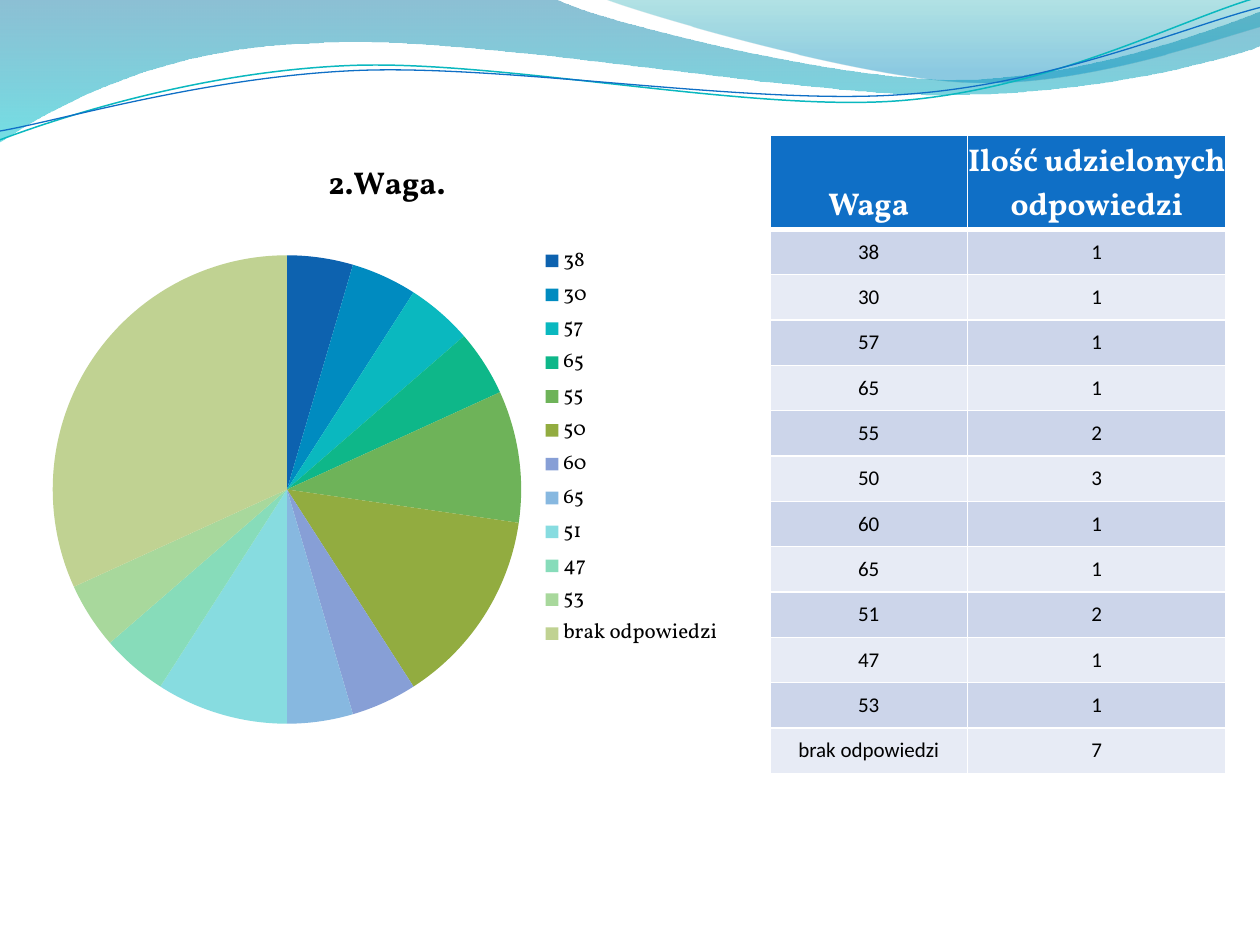
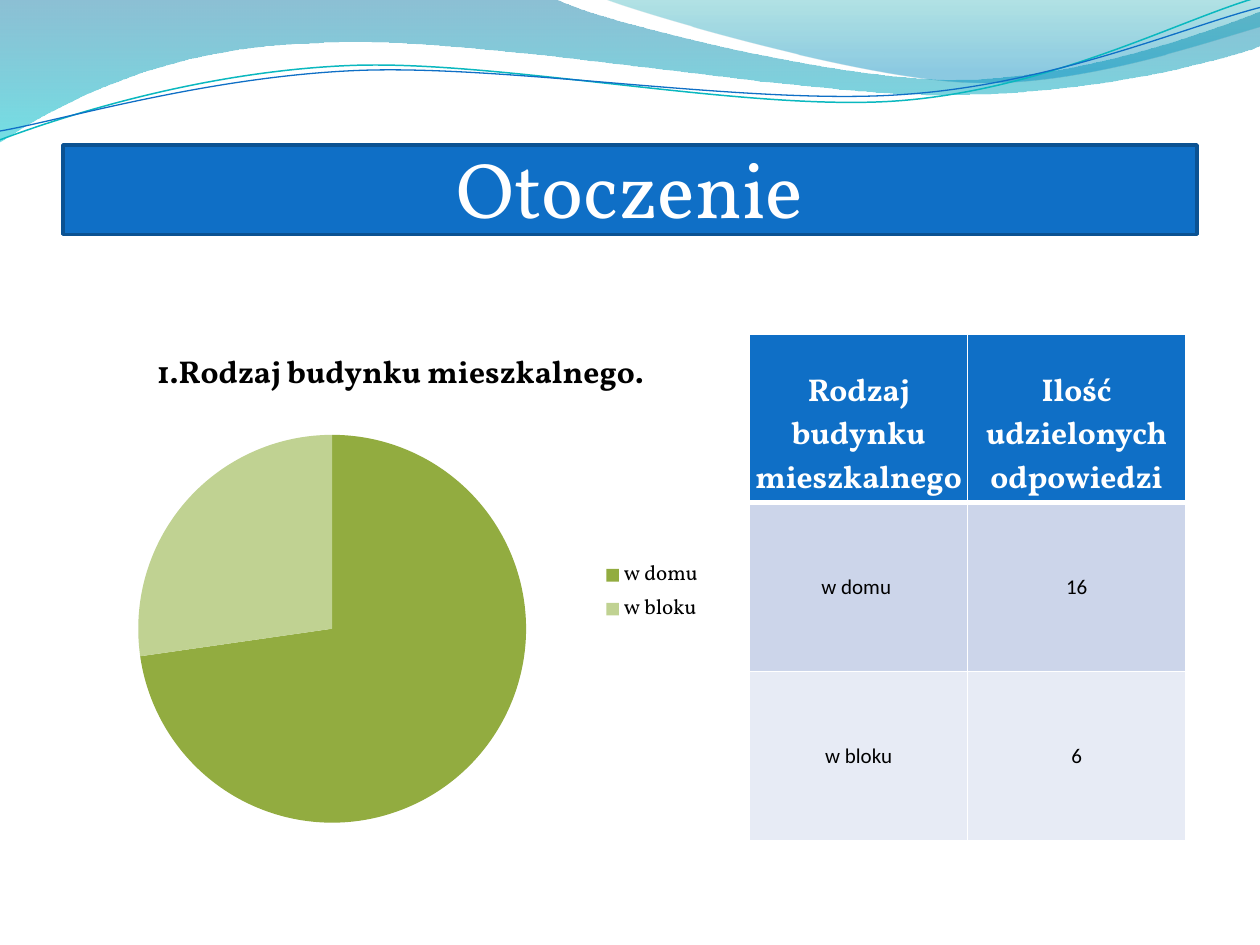
"""Build two survey slides, each with a pie chart and its table, under a wave header."""
import dataclasses
import math

import lxml.etree
import pptx
import pptx.chart.data
import pptx.dml.color
import pptx.enum.chart
import pptx.enum.text
import pptx.oxml.ns
import pptx.util

Inches, Pt = pptx.util.Inches, pptx.util.Pt
RGB = pptx.dml.color.RGBColor.from_string
PP_ALIGN, ANCHOR = pptx.enum.text.PP_ALIGN, pptx.enum.text.MSO_ANCHOR
qn = pptx.oxml.ns.qn


@dataclasses.dataclass(frozen=True)
class Theme:
    serif: str = "Vollkorn"
    sans: str = "Calibri"
    blue: str = "0F6FC6"
    dark_blue: str = "0B5292"
    teal: str = "0AB8BF"
    white: str = "FFFFFF"
    black: str = "000000"
    bands: tuple = ("CCD5EA", "E7EBF5")
    pie: tuple = ("0D62AF", "008BC0", "0AB8BF", "0EB789", "6EB359", "92AC40",
                  "879FD6", "87B8E0", "87DCE0", "87DCBA", "A8D89C", "C0D292")
    title_size: int = 45
    heading_size: int = 18
    body_size: int = 12
    chart_size: int = 10


theme = Theme()


def write(p, text, size, font, color, bold=False):
    p.alignment = PP_ALIGN.CENTER
    r = p.add_run()
    r.text = text
    r.font.size, r.font.name, r.font.bold = Pt(size), font, bold
    r.font.color.rgb = RGB(color)


def set_layout(parent, index, frame, box):
    for old in parent.findall(qn("c:layout")):
        parent.remove(old)
    layout = lxml.etree.Element(qn("c:layout"))
    manual = lxml.etree.SubElement(layout, qn("c:manualLayout"))
    left, top, width, height = frame
    fractions = ((box[0] - left) / width, (box[1] - top) / height,
                 *(size / total for size, total in zip(box[2:], (width, height))))
    settings = [("layoutTarget", "inner")] if len(box) == 4 else []
    settings += [("xMode", "edge"), ("yMode", "edge")]
    settings += [(key, f"{value:.3f}") for key, value in zip("xywh", fractions)]
    for key, value in settings:
        lxml.etree.SubElement(manual, qn(f"c:{key}")).set("val", value)
    parent.insert(index, layout)


tilt = 2.7
waves = [
    {"stops": [(0, "0074A1", 45), (1, "00C6CF", 55)],
     "points": [(0, 0), (4.4, -0.01), (4.76, 0.17, 6.64, 0.63, 7.58, 0.63),
                (8.53, 0.63, 9.58, 0.26, 10, 0.09), (10.01, 0.36),
                (9.83, 0.44, 8.7, 0.76, 7.46, 0.75), (6.22, 0.75, 3.82, 0.28, 2.57, 0.34),
                (1.29, 0.36, 0.46, 0.83, -0.01, 1.13), (0, 0)]},
    {"stops": [(0, "00A1A9", 30), (0.8, "008BBF", 45)],
     "points": [(4.79, -0.01), (5.09, 0.11, 6.82, 0.62, 7.69, 0.65),
                (8.56, 0.69, 9.61, 0.32, 10, 0.21), (10, 0), (4.79, -0.01)]},
    {"line": (theme.teal, 0.85), "center": (4.99, 0.575),
     "points": [(0, 1.11), (0.48, 0.93, 1.58, 0.57, 2.77, 0.52),
                (3.95, 0.47, 5.93, 0.89, 7.13, 0.8), (8.33, 0.71, 9.38, 0.15, 9.98, -0.02)]},
    {"line": (theme.blue, 0.75), "center": (5, 0.59),
     "points": [(0, 1.04), (0.47, 0.96, 1.64, 0.61, 2.83, 0.56),
                (4.03, 0.51, 5.97, 0.84, 7.17, 0.75), (8.36, 0.67, 9.41, 0.21, 10, 0.06)]},
]

answers = "Ilość udzielonych odpowiedzi"
slides = [
    {"title": None,
     "question": "2.Waga.", "question_at": (2.56, 1.23),
     "header": ("Waga", answers),
     "rows": [("38", 1), ("30", 1), ("57", 1), ("65", 1), ("55", 2), ("50", 3), ("60", 1),
              ("65", 1), ("51", 2), ("47", 1), ("53", 1), ("brak odpowiedzi", 7)],
     "colors": theme.pie,
     "table_at": (6.11, 1.07), "widths": (1.57, 2.05), "heights": (0.75, 0.36),
     "chart": (0.28, 0.99, 5.55, 5.12), "pie": (0.42, 2.02, 3.72, 3.73)},
    {"title": "Otoczenie",
     "question": "1.Rodzaj budynku mieszkalnego.", "question_at": (1.2, 2.71),
     "header": ("Rodzaj budynku mieszkalnego", answers),
     "rows": [("w domu ", 16), ("w bloku", 6)],
     "colors": (theme.pie[5], theme.pie[11]),
     "table_at": (5.95, 2.65), "widths": (1.73, 1.73), "heights": (1.34, 1.34),
     "chart": (0.51, 2.73, 5.2, 3.94), "pie": (1.1, 3.45, 3.08, 3.08)},
]

prs = pptx.Presentation()
prs.slide_width, prs.slide_height = Inches(10), Inches(7.5)
title_only, blank = prs.slide_layouts[5], prs.slide_layouts[6]
master_tree = prs.slide_master.shapes.element

for number, content in enumerate(slides):
    s = prs.slides.add_slide(title_only if content["title"] else blank)

    if number == 0:
        for wave in waves:
            is_band = "stops" in wave
            angle = 0 if is_band else math.radians(tilt)
            center_x, center_y = wave.get("center", (0, 0))
            vertices = []
            for segment in wave["points"]:
                for x, y in zip(segment[::2], segment[1::2]):
                    dx, dy = x - center_x, y - center_y
                    vertices.append((
                        Inches(center_x + dx * math.cos(angle) - dy * math.sin(angle)),
                        Inches(center_y + dx * math.sin(angle) + dy * math.cos(angle))))
            outline = s.shapes.build_freeform(*vertices[0], scale=1.0)
            outline.add_line_segments(vertices[1:], close=is_band)
            sp = outline.convert_to_shape()
            sp.shadow.inherit = False
            lines = list(sp.element.iter(qn("a:lnTo")))
            for segment in wave["points"][1:]:
                first = lines.pop(0)
                if len(segment) == 6:
                    first.tag = qn("a:cubicBezTo")
                    for line in (lines.pop(0), lines.pop(0)):
                        first.append(line[0])
                        line.getparent().remove(line)
            if is_band:
                sp.line.fill.background()
                sp.fill.gradient()
                sp.fill.gradient_angle = 270
                for stop, (position, color, alpha) in zip(sp.fill.gradient_stops, wave["stops"]):
                    stop.position = position
                    stop.color.rgb = RGB(color)
                for srgb, (_, _, alpha) in zip(sp.element.spPr.iter(qn("a:srgbClr")), wave["stops"]):
                    lxml.etree.SubElement(srgb, qn("a:alpha")).set("val", str(alpha * 1000))
            else:
                color, weight = wave["line"]
                sp.rotation = -tilt
                sp.fill.background()
                sp.line.color.rgb = RGB(color)
                sp.line.width = Pt(weight)
            sp.element.nvSpPr.cNvPr.set("id", str(len(master_tree) + 20))
            master_tree.append(sp.element)

    if content["title"]:
        sp = s.shapes.title
        sp.left, sp.top, sp.width, sp.height = (Inches(v) for v in (0.5, 1.15, 9, 0.71))
        sp.fill.solid()
        sp.fill.fore_color.rgb = RGB(theme.blue)
        sp.line.color.rgb = RGB(theme.dark_blue)
        sp.line.width = Pt(2)
        tf = sp.text_frame
        tf.word_wrap = True
        tf.auto_size = pptx.enum.text.MSO_AUTO_SIZE.NONE
        tf.vertical_anchor = ANCHOR.BOTTOM
        tf.margin_left = tf.margin_right = tf.margin_bottom = 0
        tf.margin_top = Inches(0.05)
        write(tf.paragraphs[0], content["title"], theme.title_size, theme.serif, theme.white)

    rows = [content["header"], *content["rows"]]
    head_height, row_height = content["heights"]
    left, top = content["table_at"]
    table = s.shapes.add_table(len(rows), 2, Inches(left), Inches(top),
                               Inches(sum(content["widths"])),
                               Inches(head_height + row_height * (len(rows) - 1))).table
    for column, width in zip(table.columns, content["widths"]):
        column.width = Inches(width)
    for i, row in enumerate(rows):
        is_header = i == 0
        table.rows[i].height = Inches(head_height if is_header else row_height)
        for j, value in enumerate(row):
            cell = table.cell(i, j)
            cell.margin_left = cell.margin_right = cell.margin_top = cell.margin_bottom = 0
            cell.vertical_anchor = ANCHOR.BOTTOM if is_header else ANCHOR.MIDDLE
            cell.fill.solid()
            cell.fill.fore_color.rgb = RGB(theme.blue if is_header else theme.bands[(i - 1) % 2])
            p = cell.text_frame.paragraphs[0]
            if is_header:
                write(p, value, theme.heading_size, theme.serif, theme.white, True)
            else:
                write(p, str(value), theme.body_size, theme.sans, theme.black)
            tc_pr = cell._tc.get_or_add_tcPr()
            for k, side in enumerate("LRTB"):
                thick = (is_header and side == "B") or (i == 1 and side == "T")
                ln = lxml.etree.Element(qn(f"a:ln{side}"), w=str(Pt(3 if thick else 1)))
                fill = lxml.etree.SubElement(ln, qn("a:solidFill"))
                lxml.etree.SubElement(fill, qn("a:srgbClr")).set("val", theme.white)
                tc_pr.insert(k, ln)

    data = pptx.chart.data.CategoryChartData()
    data.categories = [name for name, _ in content["rows"]]
    data.add_series("Series 1", [count for _, count in content["rows"]])
    chart = s.shapes.add_chart(pptx.enum.chart.XL_CHART_TYPE.PIE,
                               *(Inches(v) for v in content["chart"]), data).chart
    chart.font.size, chart.font.name = Pt(theme.chart_size), theme.serif
    chart.font.color.rgb = RGB(theme.black)
    chart.has_title = True
    write(chart.chart_title.text_frame.paragraphs[0], content["question"],
          theme.heading_size, theme.serif, theme.black, True)
    chart.has_legend = True
    chart.legend.position = pptx.enum.chart.XL_LEGEND_POSITION.RIGHT
    chart.legend.include_in_layout = False
    chart.legend.font.size, chart.legend.font.name = Pt(theme.body_size), theme.serif
    chart.legend.font.color.rgb = RGB(theme.black)
    plot = chart.plots[0]
    plot.vary_by_categories = True
    for i, color in enumerate(content["colors"]):
        point = plot.series[0].points[i]
        point.format.fill.solid()
        point.format.fill.fore_color.rgb = RGB(color)
    title_element = next(chart.element.iter(qn("c:title")))
    plot_area = next(chart.element.iter(qn("c:plotArea")))
    set_layout(title_element, 1, content["chart"], content["question_at"])
    set_layout(plot_area, 0, content["chart"], content["pie"])

prs.save("out.pptx")
